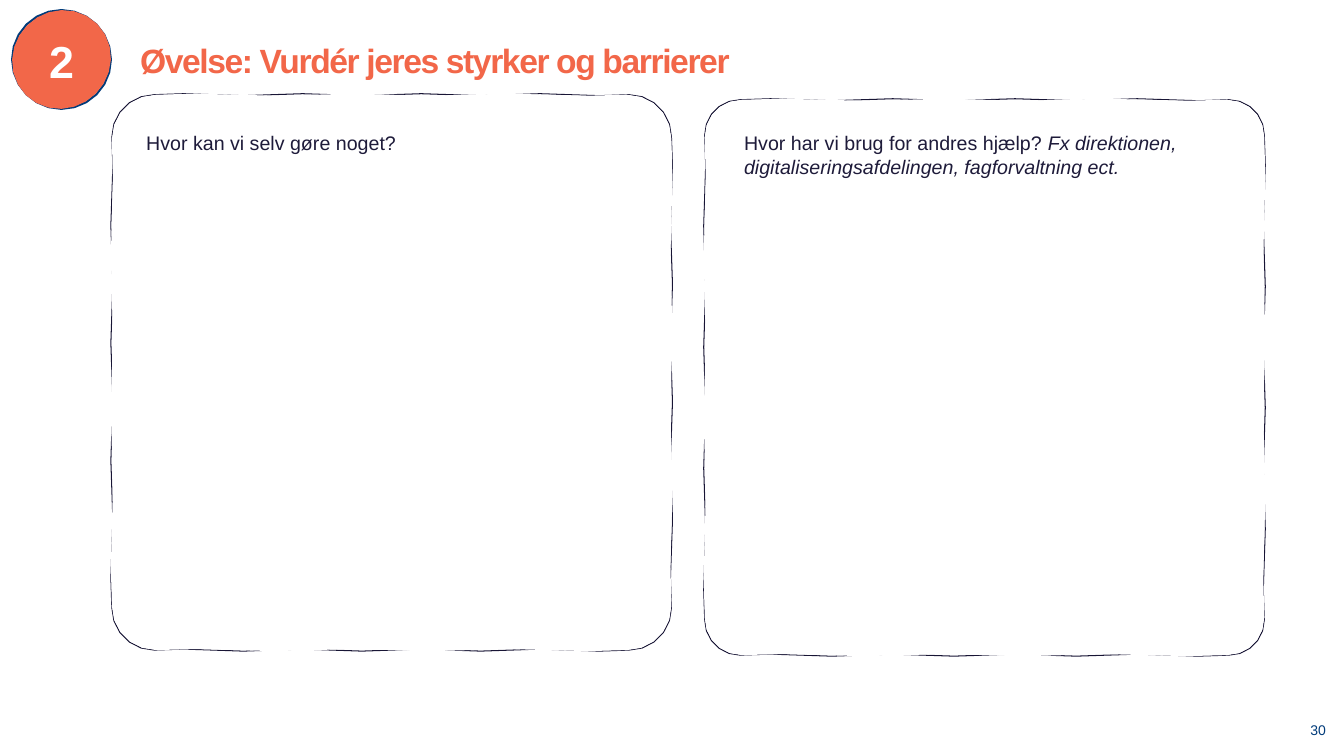
"""Build the exercise slide with two hand-drawn panels and a numbered badge."""
import copy
import math

import pptx
import pptx.dml.color
import pptx.enum.text
import pptx.util

Inches = pptx.util.Inches
Pt = pptx.util.Pt
RGBColor = pptx.dml.color.RGBColor
ALIGN = pptx.enum.text.PP_ALIGN
ANCHOR = pptx.enum.text.MSO_ANCHOR

CORAL = RGBColor(0xF2, 0x67, 0x49)
BLUE = RGBColor(0x00, 0x3B, 0x7A)
NAVY = RGBColor(0x18, 0x15, 0x35)
INK = RGBColor(0x1E, 0x1B, 0x3A)
WHITE = RGBColor(0xFF, 0xFF, 0xFF)

TITLE = "Øvelse: Vurdér jeres styrker og barrierer"
BADGE_NUMBER = "2"
PAGE_NUMBER = "30"
PANEL_SIZE = (5.55, 5.51)
PANELS = [
    {"corner": (1.11, 0.94), "radius": 0.42, "text": (1.45, 1.29, 5.07, 0.23),
     "question": ["Hvor kan vi selv gøre noget?"]},
    {"corner": (6.99, 0.99), "radius": 0.35, "text": (7.38, 1.29, 4.97, 0.47),
     "question": ["Hvor har vi brug for andres hjælp? ",
                  "Fx direktionen, digitaliseringsafdelingen, fagforvaltning ect."]},
]
BADGE_CENTER = (0.61, 0.59)
BADGE_RADIUS = 0.49
WOBBLE = 0.01


def polar(center, radius, degrees):
    angle = math.radians(degrees)
    return center[0] + radius * math.cos(angle), center[1] + radius * math.sin(angle)


def panel_outline(corner, radius, bumps):
    left, top = corner
    right, bottom = left + PANEL_SIZE[0], top + PANEL_SIZE[1]
    centers = [(right - radius, top + radius), (right - radius, bottom - radius),
               (left + radius, bottom - radius), (left + radius, top + radius)]
    points = []
    for index, center in enumerate(centers):
        following = centers[(index + 1) % 4]
        facing = 90 * index
        points += [polar(center, radius, facing - 90 + 18 * step) for step in range(6)]
        for bump in range(bumps):
            share = (bump + 0.5) / bumps
            base = [a + (b - a) * share for a, b in zip(center, following)]
            points.append(polar(base, radius + WOBBLE * (-1) ** bump, facing))
    return points


def badge_outline(bulge):
    return [polar(BADGE_CENTER, BADGE_RADIUS - bulge * math.sin(math.radians(2 * angle)), angle)
            for angle in range(0, 360, 15)]


def add_sketch(page, outline, filling, fill, line, width):
    contours = [[(Inches(x), Inches(y)) for x, y in points] for points in (outline, filling)]
    builder = page.shapes.build_freeform(*contours[0][0])
    builder.add_line_segments(contours[0][1:], close=True)
    builder.move_to(*contours[1][0])
    builder.add_line_segments(contours[1][1:], close=True)
    shape = builder.convert_to_shape()
    shape.shadow.inherit = False
    shape.fill.solid()
    shape.fill.fore_color.rgb = fill
    shape.line.color.rgb = line
    shape.line.width = Pt(width)
    stroke_part = shape.element.xpath(".//a:path")[0]
    fill_part = copy.deepcopy(stroke_part)
    stroke_part.addnext(fill_part)
    split = len(outline) + 1
    for child in list(stroke_part)[split:]:
        stroke_part.remove(child)
    for child in list(fill_part)[:split]:
        fill_part.remove(child)
    stroke_part.set("fill", "none")
    fill_part.set("stroke", "0")
    return shape


def write(shape, texts, size, color, bold=False, align=ALIGN.LEFT, spacing=1.04):
    frame = shape.text_frame
    frame.word_wrap = True
    para = frame.paragraphs[0]
    para.alignment = align
    para.line_spacing = spacing
    for text in texts:
        span = para.add_run()
        span.text = text
        span.font.name = "Arial"
        span.font.size = Pt(size)
        span.font.bold = bold
        span.font.color.rgb = color
    return para


def add_text_box(page, place, inset=True):
    box = page.shapes.add_textbox(*map(Inches, place))
    if not inset:
        frame = box.text_frame
        frame.margin_left = frame.margin_right = frame.margin_top = frame.margin_bottom = 0
    return box


def main():
    deck = pptx.Presentation()
    deck.slide_width = Inches(13.33)
    deck.slide_height = Inches(7.5)
    page = deck.slides.add_slide(deck.slide_layouts[6])

    for panel in PANELS:
        corner, radius = panel["corner"], panel["radius"]
        add_sketch(page, panel_outline(corner, radius, 8),
                   panel_outline(corner, radius + 0.02, 6), WHITE, NAVY, 0.75)
        box = add_text_box(page, panel["text"], inset=False)
        para = write(box, panel["question"], 14, INK)
        for span in para.runs[1:]:
            span.font.italic = True

    badge = add_sketch(page, badge_outline(0), badge_outline(0.01), CORAL, BLUE, 1.5)
    badge.text_frame.vertical_anchor = ANCHOR.MIDDLE
    write(badge, [BADGE_NUMBER], 32, WHITE, bold=True, align=ALIGN.CENTER)

    title = add_text_box(page, (1.29, 0.33, 8.08, 0.56))
    heading = write(title, [TITLE], 24, CORAL, bold=True)
    heading.runs[0].font._element.set("spc", "-100")

    number = add_text_box(page, (12.54, 6.84, 0.61, 0.48), inset=False)
    number.text_frame.vertical_anchor = ANCHOR.BOTTOM
    write(number, [PAGE_NUMBER], 10, BLUE, align=ALIGN.RIGHT, spacing=1.0)

    deck.save("out.pptx")


if __name__ == "__main__":
    main()
